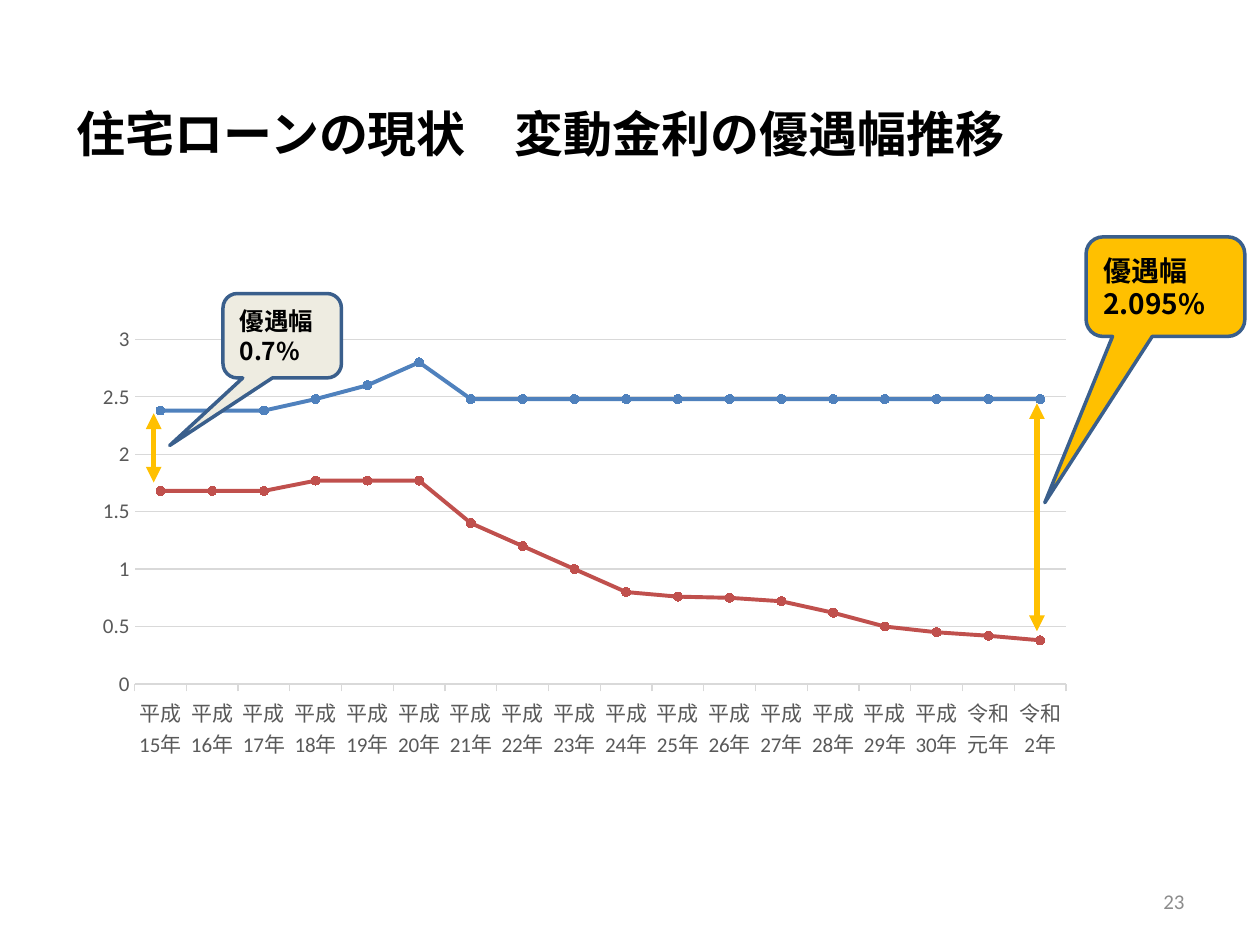
import pptx
import pptx.chart.data
import pptx.dml.color
import pptx.enum.chart
import pptx.enum.shapes
import pptx.enum.text
import pptx.oxml
import pptx.oxml.ns
import pptx.util
from dataclasses import dataclass


@dataclass(frozen=True)
class Theme:
    # Colours
    black: str = "000000"
    gold: str = "FFC000"
    cream: str = "EEECE1"
    edge: str = "3A5F8C"
    blue: str = "4F81BD"
    red: str = "C0504D"
    grid: str = "D9D9D9"
    label: str = "595959"
    page: str = "8C8C8C"
    # Fonts and sizes
    latin: str = "Calibri"
    asian: str = "Noto Sans CJK JP"
    head: int = 28
    large: int = 16
    mid: int = 14
    small: int = 12


def color(code):
    return pptx.dml.color.RGBColor.from_string(code)


def put(item, values):
    for name, value in values.items():
        setattr(item, name, value)


def add_xml(parent, tag, **values):
    node = pptx.oxml.parse_xml(f"<{tag} {pptx.oxml.ns.nsdecls(tag.split(':')[0])}/>")
    for name, value in values.items():
        node.set(name, str(value))
    parent.append(node)
    return node


class Deck:
    """Places elements on a grid of 100 columns by 75 rows."""
    cols, rows = 100, 75

    def __init__(self, theme):
        self.theme = theme
        self.show = pptx.Presentation()
        put(self.show, {"slide_width": pptx.util.Inches(10),
                        "slide_height": pptx.util.Inches(7.5)})
        self.slide = self.show.slides.add_slide(self.show.slide_layouts[5])
        self.shapes = self.slide.shapes

    def grid(self, *spots):
        steps = (self.show.slide_width / self.cols, self.show.slide_height / self.rows)
        return [round(spot * steps[i % 2]) for i, spot in enumerate(spots)]

    def font(self, font, size, code, bold=False, name=None):
        put(font, {"size": pptx.util.Pt(size), "bold": bold,
                   "name": name or self.theme.latin})
        font.color.rgb = color(code)

    def stroke(self, line, code, width):
        line.color.rgb = color(code)
        line.width = pptx.util.Pt(width)

    def words(self, shape, lines, size, code, align="LEFT", anchor="MIDDLE",
              bold=True, name=None):
        frame = shape.text_frame
        put(frame, {"text": "\n".join(lines), "word_wrap": True,
                    "auto_size": pptx.enum.text.MSO_AUTO_SIZE.NONE,
                    "vertical_anchor": getattr(pptx.enum.text.MSO_ANCHOR, anchor)})
        face = name or self.theme.asian
        for para in frame.paragraphs:
            para.alignment = getattr(pptx.enum.text.PP_ALIGN, align)
            for run in para.runs:
                self.font(run.font, size, code, bold, face)
                add_xml(run._r.get_or_add_rPr(), "a:ea", typeface=face)

    def title(self, text, box):
        shape = self.shapes.title
        put(shape, dict(zip(("left", "top", "width", "height"), self.grid(*box))))
        self.words(shape, [text], self.theme.head, self.theme.black, anchor="TOP")

    def page(self, text, box):
        shape = self.shapes.add_textbox(*self.grid(*box))
        self.words(shape, [text], self.theme.small, self.theme.page,
                   "RIGHT", bold=False, name=self.theme.latin)

    def callout(self, lines, box, tip, fill, size):
        kind = pptx.enum.shapes.MSO_SHAPE.ROUNDED_RECTANGULAR_CALLOUT
        shape = self.shapes.add_shape(kind, *self.grid(*box))
        shape.shadow.inherit = False
        for i, value in enumerate(tip):
            shape.adjustments[i] = value
        shape.fill.solid()
        shape.fill.fore_color.rgb = color(fill)
        self.stroke(shape.line, self.theme.edge, 2)
        self.words(shape, lines, size, self.theme.black)

    def arrow(self, x, top, base):
        kind = pptx.enum.shapes.MSO_CONNECTOR.STRAIGHT
        line = self.shapes.add_connector(kind, *self.grid(x, top, x, base))
        self.stroke(line.line, self.theme.gold, 3)
        props = line._element.spPr
        for end in ("a:headEnd", "a:tailEnd"):
            add_xml(props.find(pptx.oxml.ns.qn("a:ln")), end, type="triangle")
        add_xml(props, "a:effectLst")

    def chart(self, cats, series, box, plot):
        enum = pptx.enum.chart
        data = pptx.chart.data.CategoryChartData()
        data.categories = cats
        for name, (values, _) in series.items():
            data.add_series(name, values)
        chart = self.shapes.add_chart(enum.XL_CHART_TYPE.LINE_MARKERS,
                                      *self.grid(*box), data).chart
        put(chart, {"has_title": False, "has_legend": False})
        self.font(chart.font, 10, self.theme.black)
        # Axes
        put(chart.value_axis, {"minimum_scale": 0, "maximum_scale": 3, "major_unit": 0.5,
                               "major_tick_mark": enum.XL_TICK_MARK.NONE})
        chart.category_axis.major_tick_mark = enum.XL_TICK_MARK.OUTSIDE
        for axis in (chart.category_axis, chart.value_axis):
            self.font(axis.tick_labels.font, self.theme.small, self.theme.label)
        chart.value_axis.format.line.fill.background()
        for line in (chart.category_axis.format.line,
                     chart.value_axis.major_gridlines.format.line):
            self.stroke(line, self.theme.grid, 0.75)
        # Series
        chart.plots[0].vary_by_categories = False
        for item, (_, code) in zip(chart.plots[0].series, series.values()):
            item.smooth = False
            self.stroke(item.format.line, code, 2.25)
            put(item.marker, {"style": enum.XL_MARKER_STYLE.CIRCLE, "size": 5})
            item.marker.format.fill.solid()
            item.marker.format.fill.fore_color.rgb = color(code)
            self.stroke(item.marker.format.line, code, 0.75)
        # Inner plot area
        area = chart._chartSpace.chart.plotArea
        for old in area.findall(pptx.oxml.ns.qn("c:layout")):
            area.remove(old)
        frame = add_xml(area, "c:layout")
        area.insert(0, frame)
        hand = add_xml(frame, "c:manualLayout")
        rules = {"layoutTarget": "inner", "xMode": "edge", "yMode": "edge",
                 **dict(zip("xywh", plot))}
        for name, value in rules.items():
            add_xml(hand, f"c:{name}", val=value)


def main():
    theme = Theme()
    deck = Deck(theme)

    # Heading
    deck.title("住宅ローンの現状　変動金利の優遇幅推移", (5.1, 7.7, 78.7, 5.7))

    # Rate chart
    years = [f"平成{n}年" for n in range(15, 31)] + ["令和元年", "令和2年"]
    base = [2.38] * 3 + [2.48, 2.6, 2.8] + [2.48] * 12
    rate = [1.68] * 3 + [1.77] * 3 + [1.4, 1.2, 1, 0.8, 0.76, 0.75,
                                      0.72, 0.62, 0.5, 0.45, 0.42, 0.38]
    deck.chart(years, {"Series 1": (base, theme.blue), "Series 2": (rate, theme.red)},
               (6.7, 13.5, 79.5, 48), (0.05, 0.28, 0.93, 0.57))

    # Gap arrows
    deck.arrow(82.3, 32, 50.1)
    deck.arrow(12.2, 32.8, 38.3)

    # Gap callouts
    deck.callout(["優遇幅", "2.095%"], (86.2, 18.8, 12.6, 7.9),
                 (-0.76, 2.17, 0.17), theme.gold, theme.large)
    deck.callout(["優遇幅", "0.7%"], (17.7, 23.3, 9.4, 6.7),
                 (-0.95, 1.3, 0.17), theme.cream, theme.mid)

    # Page number
    deck.page("23", (71.7, 69.5, 23.3, 4))
    deck.show.save("out.pptx")


if __name__ == "__main__":
    main()
